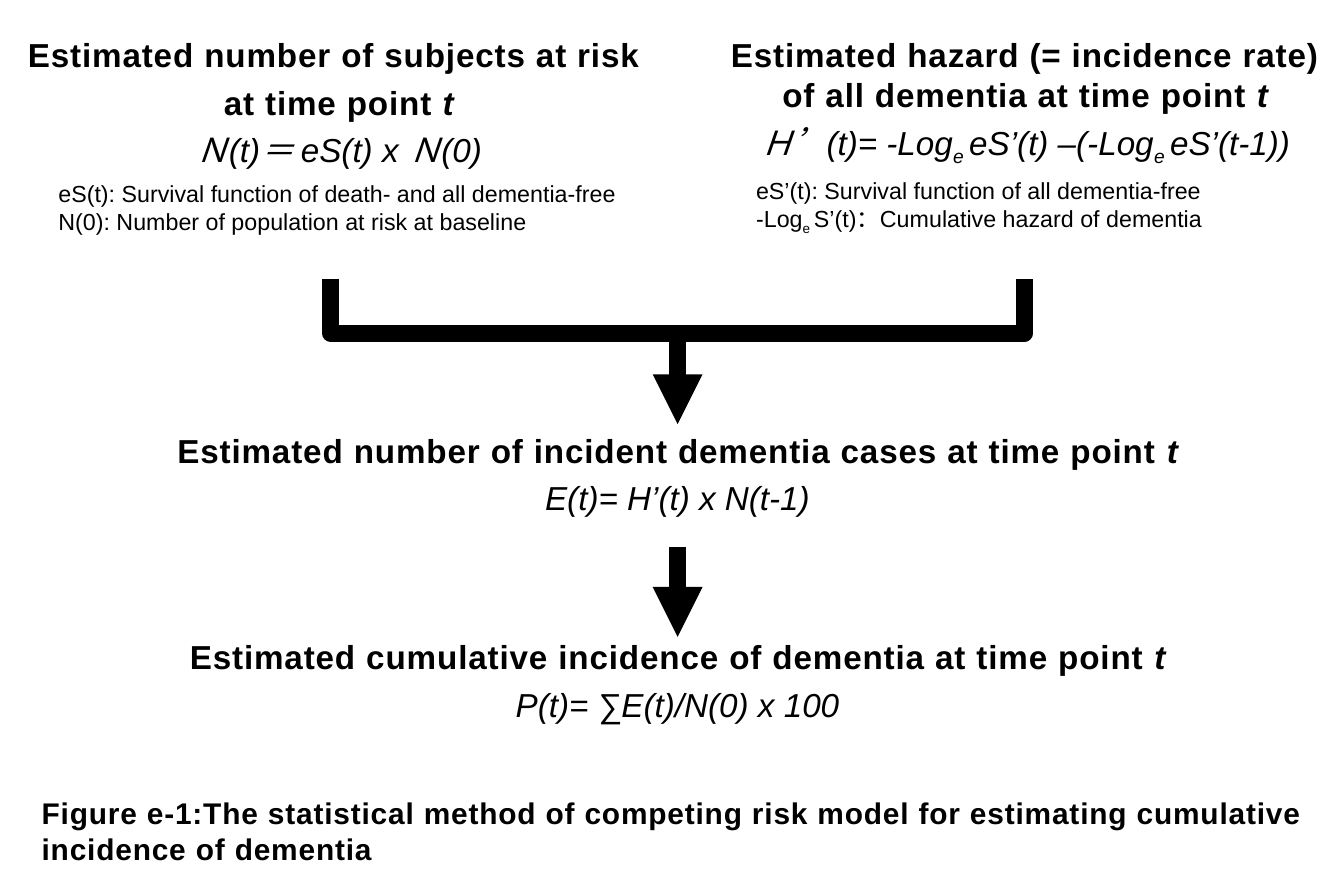
from dataclasses import dataclass

from lxml import etree
from pptx import Presentation
from pptx import util as u
from pptx.dml.color import RGBColor
from pptx.enum import shapes, text
from pptx.oxml import ns


@dataclass(frozen=True)
class Theme:
    font: str = "Arial"
    ink: str = "000000"
    outline: str = "262D2E"
    heading: float = 20
    note: float = 14
    caption: float = 18
    line: float = 10
    space_before: float = 4.6
    formula_after: float = 5.8


THEME = Theme()
INK = RGBColor.from_string(THEME.ink)
CENTER = text.PP_ALIGN.CENTER
LEFT = text.PP_ALIGN.LEFT


# Text helpers
def add_box(slide, box, wrap=True):
    shape = slide.shapes.add_textbox(*(u.Pt(value) for value in box))
    frame = shape.text_frame
    frame.word_wrap = wrap
    frame.auto_size = text.MSO_AUTO_SIZE.SHAPE_TO_FIT_TEXT
    return frame


def next_paragraph(frame, alignment=LEFT, before=0, after=0):
    first = not frame.paragraphs[0].runs
    paragraph = frame.paragraphs[0] if first else frame.add_paragraph()
    paragraph.alignment = alignment
    paragraph.space_before = u.Pt(0 if first else before)
    paragraph.space_after = u.Pt(after)
    return paragraph


def add_run(paragraph, words, size, bold=False, italic=False, subscript=False):
    run = paragraph.add_run()
    run.text = words
    font = run.font
    font.name, font.size = THEME.font, u.Pt(size)
    font.bold, font.italic = bold, italic
    font.color.rgb = INK
    properties = run._r.get_or_add_rPr()
    if subscript:
        properties.set("baseline", "-25000")
    if bold:  # bold text is spaced out and has a faint outline
        properties.set("spc", "50")
        line = etree.Element(ns.qn("a:ln"), w=str(u.Pt(1.06)))
        fill = etree.SubElement(line, ns.qn("a:solidFill"))
        color = etree.SubElement(fill, ns.qn("a:srgbClr"), val=THEME.outline)
        etree.SubElement(color, ns.qn("a:alpha"), val="6000")
        properties.insert(0, line)


def add_heading(frame, words, variable=""):
    paragraph = next_paragraph(frame, CENTER, THEME.space_before)
    add_run(paragraph, words, THEME.heading, bold=True)
    if variable:
        add_run(paragraph, variable, THEME.heading, bold=True, italic=True)


def add_parts(paragraph, parts, size, italic=False):
    """Every second part is a subscript."""
    for index, words in enumerate(parts):
        add_run(paragraph, words, size, italic=italic, subscript=index % 2 == 1)


def add_formula(frame, parts, after=0):
    paragraph = next_paragraph(frame, CENTER, THEME.space_before, after)
    add_parts(paragraph, parts, THEME.heading, italic=True)


# Regions
def add_input(slide, box, headings, formula, notes, indent):
    frame = add_box(slide, box)
    for heading in headings:
        add_heading(frame, *heading)
    add_formula(frame, formula, THEME.formula_after)
    for note in notes:
        paragraph = next_paragraph(frame)
        properties = paragraph._p.get_or_add_pPr()
        properties.set("marL", "0")
        properties.set("indent", str(u.Pt(indent)))
        add_parts(paragraph, note, THEME.note)


def add_step(slide, box, heading, formula):
    frame = add_box(slide, box, wrap=False)
    add_heading(frame, heading, "t")
    add_formula(frame, [formula])


def add_caption(slide, box, words):
    paragraph = next_paragraph(add_box(slide, box))
    add_run(paragraph, words, THEME.caption, bold=True)


def style_line(shape):
    shape.line.color.rgb = INK
    shape.line.width = u.Pt(THEME.line)


def add_bracket(slide, box):
    left, top, width, height = box
    right, bottom = left + width, top + height
    builder = slide.shapes.build_freeform(u.Pt(left), u.Pt(top))
    corners = [(left, bottom), (right, bottom), (right, top)]
    builder.add_line_segments([(u.Pt(x), u.Pt(y)) for x, y in corners], close=False)
    shape = builder.convert_to_shape()
    shape.fill.background()
    shape.shadow.inherit = False
    style_line(shape)


def add_arrow(slide, x, top, length):
    arrow = slide.shapes.add_connector(
        shapes.MSO_CONNECTOR.STRAIGHT, u.Pt(x), u.Pt(top), u.Pt(x), u.Pt(top + length))
    style_line(arrow)
    etree.SubElement(arrow.line._get_or_add_ln(), ns.qn("a:tailEnd"), type="triangle")
    etree.SubElement(arrow._element.spPr, ns.qn("a:effectLst"))


def main():
    presentation = Presentation()
    presentation.slide_width, presentation.slide_height = u.Pt(810), u.Pt(540)
    slide = presentation.slides.add_slide(presentation.slide_layouts[6])

    # Two inputs
    add_input(
        slide, (-0.7, 17.3, 409.7, 134.6),
        [("Estimated number of subjects at risk ",), ("at time point ", "t")],
        ["Ｎ(t)＝ eS(t) x Ｎ(0)"],
        [["eS(t): Survival function of death- and all dementia-free"],
         ["N(0): Number of population at risk at baseline"]],
        indent=28.8)
    add_input(
        slide, (427.7, 17.3, 380.2, 129.6),
        [("Estimated hazard (= incidence rate) of all dementia at time point ", "t")],
        ["Ｈ’(t)= -Log", "e ", "eS’(t) –(-Log", "e ", "eS’(t-1))"],
        [["eS’(t): Survival function of all dementia-free"],
         ["-Log", "e ", "S’(t)：Cumulative hazard of dementia"]],
        indent=20.9)

    # Two steps, centred under the bracket
    center = 408.4
    for top, width, heading, formula in [
        (255.6, 621.4, "Estimated number of incident dementia cases at time point ",
         "E(t)= H’(t) x N(t-1)"),
        (380.2, 606.2, "Estimated cumulative incidence of dementia at time point ",
         "P(t)= ∑E(t)/N(0) x 100"),
    ]:
        add_step(slide, (center - width / 2, top, width, 60.5), heading, formula)

    # Flow lines
    add_bracket(slide, (center - 209, 168, 418, 33))
    for top in (201.6, 329.8):
        add_arrow(slide, center, top, 54)

    add_caption(
        slide, (18, 475.2, 782, 51),
        "Figure e-1:The statistical method of competing risk model for "
        "estimating cumulative incidence of dementia")
    presentation.save("out.pptx")


if __name__ == "__main__":
    main()
